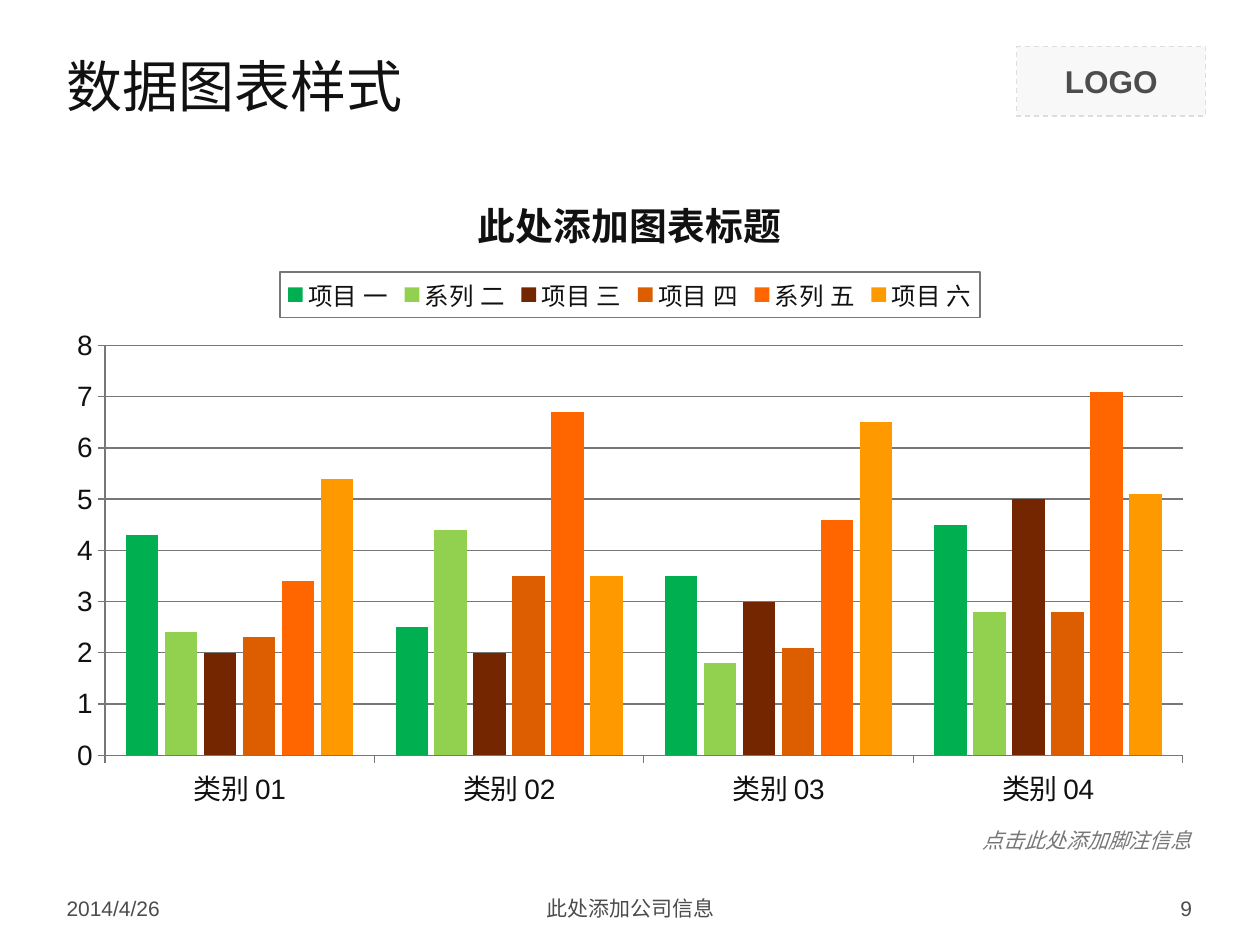
from lxml import etree
from pptx import Presentation
from pptx.chart.data import CategoryChartData as ChartData
from pptx.dml.color import RGBColor
from pptx.enum.chart import XL_CHART_TYPE as Kind, XL_LEGEND_POSITION as Place
from pptx.enum.chart import XL_TICK_MARK as Tick
from pptx.enum.dml import MSO_LINE as Dash
from pptx.enum.shapes import MSO_SHAPE as Shape
from pptx.enum.text import MSO_ANCHOR as Anchor, PP_ALIGN as Align
from pptx.oxml import parse_xml
from pptx.util import Inches, Pt

HEX = {
    "ink": "111111", "rule": "777777", "foot": "4C4C4C",
    "logo": "4D4D4D", "pale": "F8F8F8", "edge": "DDDDDD",
}
CATS = ["类别 01", "类别 02", "类别 03", "类别 04"]
SERIES = [
    ("项目 一", "00B050", (4.3, 2.5, 3.5, 4.5)),
    ("系列 二", "92D050", (2.4, 4.4, 1.8, 2.8)),
    ("项目 三", "742600", (2, 2, 3, 5)),
    ("项目 四", "DC5E01", (2.3, 3.5, 2.1, 2.8)),
    ("系列 五", "FF6600", (3.4, 6.7, 4.6, 7.1)),
    ("项目 六", "FF9900", (5.4, 3.5, 6.5, 5.1)),
]
NS = ('xmlns:c="http://schemas.openxmlformats.org/drawingml/2006/chart" '
      'xmlns:a="http://schemas.openxmlformats.org/drawingml/2006/main"')


def rgb(name):
    return RGBColor.from_string(HEX.get(name, name))


def style(font, color="ink", **form):
    for key, val in {"name": "Arial", **form}.items():
        setattr(font, key, val)
    font.color.rgb = rgb(color)


def write(shape, text, align=Align.LEFT, wrap=True, anchor=Anchor.MIDDLE, **form):
    frame = shape.text_frame
    frame.word_wrap = wrap
    frame.vertical_anchor = anchor
    para = frame.paragraphs[0]
    para.alignment = align
    run = para.add_run()
    run.text = text
    style(run.font, **form)


def add_text(slide, box, text, **form):
    write(slide.shapes.add_textbox(*map(Inches, box)), text, **form)


def add_logo(slide, box):
    shape = slide.shapes.add_shape(Shape.RECTANGLE, *map(Inches, box))
    shape.shadow.inherit = False
    shape.fill.solid()
    shape.fill.fore_color.rgb = rgb("pale")
    draw(shape.line, "edge")
    shape.line.dash_style = Dash.DASH
    write(shape, "LOGO", Align.CENTER, size=Pt(18), bold=True, color="logo")


def draw(line, color="rule"):
    line.color.rgb = rgb(color)
    line.width = Pt(0.75)


def set_axis(axis):
    axis.major_tick_mark = Tick.OUTSIDE
    axis.minor_tick_mark = Tick.NONE
    draw(axis.format.line)
    style(axis.tick_labels.font, size=Pt(16))


def set_legend(chart):
    chart.has_legend = True
    legend = chart.legend
    legend.position = Place.TOP
    legend.include_in_layout = False
    style(legend.font, size=Pt(14))
    # The frame goes just before the text properties
    frame = parse_xml(
        f'<c:spPr {NS}><a:ln w="{Pt(0.75)}"><a:solidFill>'
        f'<a:srgbClr val="{HEX["rule"]}"/></a:solidFill></a:ln></c:spPr>')
    text = legend._element.find(etree.QName(frame.nsmap["c"], "txPr").text)
    text.addprevious(frame)


def add_bars(slide, box):
    data = ChartData()
    data.categories = CATS
    for name, _, vals in SERIES:
        data.add_series(name, vals)
    chart = slide.shapes.add_chart(
        Kind.COLUMN_CLUSTERED, *map(Inches, box), data).chart
    style(chart.font, size=Pt(18))

    # Title and legend
    chart.has_title = True
    para = chart.chart_title.text_frame.paragraphs[0]
    run = para.add_run()
    run.text = "此处添加图表标题"
    style(run.font, size=Pt(21.6), bold=True)
    chart.chart_title.include_in_layout = False
    set_legend(chart)

    # Axes
    set_axis(chart.category_axis)
    set_axis(chart.value_axis)
    chart.value_axis.has_major_gridlines = True
    draw(chart.value_axis.major_gridlines.format.line)

    # Bars
    plot = chart.plots[0]
    plot.gap_width, plot.overlap = 130, -20
    plot.vary_by_categories = False
    for bar, (_, color, _) in zip(plot.series, SERIES):
        bar.format.fill.solid()
        bar.format.fill.fore_color.rgb = rgb(color)


def main():
    deck = Presentation()
    deck.slide_width, deck.slide_height = Inches(10), Inches(7.5)
    slide = deck.slides.add_slide(deck.slide_layouts[6])

    # Heading
    add_logo(slide, (8.07, 0.37, 1.5, 0.55))
    add_text(slide, (0.43, 0.28, 9.14, 0.79), "数据图表样式",
             size=Pt(32), name="Montserrat")

    # Chart
    add_bars(slide, (0.43, 1.31, 9.14, 5.2))

    # Footer row
    for left, width, text, align in (
            (0.43, 2.33, "2014/4/26", Align.LEFT),
            (3.42, 3.17, "此处添加公司信息", Align.CENTER),
            (7.23, 2.33, "9", Align.RIGHT)):
        add_text(slide, (left, 7.06, width, 0.29), text, align=align,
                 size=Pt(12), color="foot")

    # Footnote
    add_text(slide, (7.68, 6.52, 1.88, 0.3), "点击此处添加脚注信息",
             align=Align.RIGHT, wrap=False, anchor=Anchor.TOP,
             size=Pt(12), italic=True, color="rule")
    deck.save("out.pptx")


if __name__ == "__main__":
    main()
